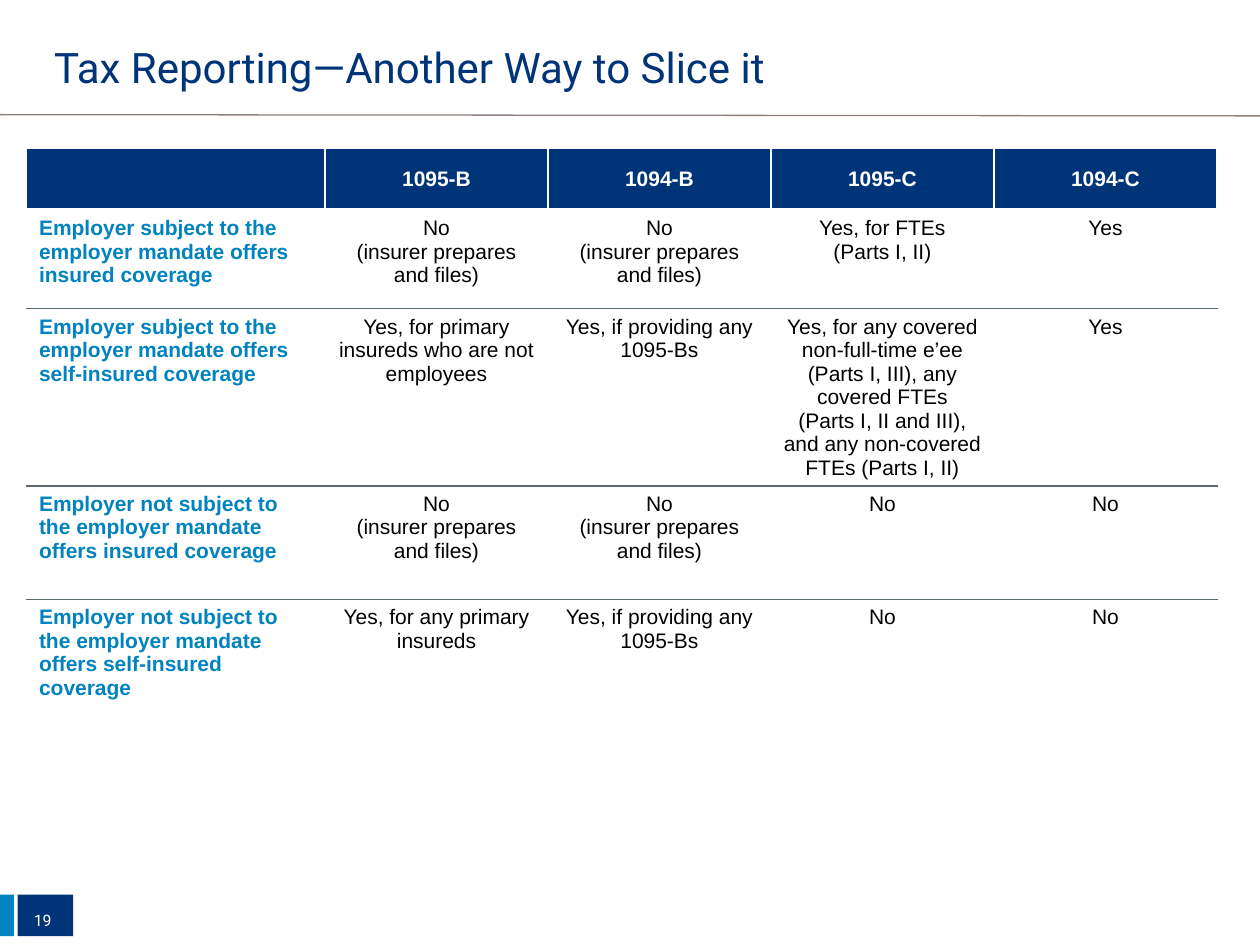
from lxml.etree import SubElement
from pptx import Presentation
from pptx.dml.color import RGBColor
from pptx.enum.shapes import MSO_CONNECTOR, MSO_SHAPE
from pptx.enum.text import MSO_ANCHOR, PP_ALIGN
from pptx.oxml.ns import qn
from pptx.util import Inches, Pt

NAVY, BLUE, GREY, WHITE, BLACK = "003478", "0083BE", "5E6A71", "FFFFFF", "000000"
WIDTHS = [2.37, 1.77, 1.77, 1.77, 1.77]
HEIGHTS = [0.49, 0.78, 1.3, 0.9, 1.09]
INSURER = "No\n(insurer prepares and files)"
FILES = "Yes, if providing any 1095-Bs"
ROWS = [
    ["", "1095-B", "1094-B", "1095-C", "1094-C"],
    ["Employer subject to the employer mandate offers insured coverage",
     INSURER, INSURER, "Yes, for FTEs\n(Parts I, II)", "Yes"],
    ["Employer subject to the employer mandate offers self-insured coverage",
     "Yes, for primary insureds who are not employees", FILES,
     "Yes, for any covered non-full-time e’ee (Parts I, III), any covered FTEs\n"
     "(Parts I, II and III), and any non-covered FTEs (Parts I, II)", "Yes"],
    ["Employer not subject to the employer mandate offers insured coverage",
     INSURER, INSURER, "No", "No"],
    ["Employer not subject to the employer mandate offers self-insured coverage",
     "Yes, for any primary insureds", FILES, "No", "No"],
]
RULES = [(WHITE, 1), (WHITE, 3), (GREY, 1), (GREY, 1), (GREY, 1), (WHITE, 1)]


def color(code):
    return RGBColor.from_string(code)


def write(frame, text, size=12, font="Arial", ink=BLACK, bold=False,
          align=PP_ALIGN.LEFT, anchor=MSO_ANCHOR.TOP):
    frame.text = text
    frame.word_wrap = True
    frame.vertical_anchor = anchor
    for para in frame.paragraphs:
        para.alignment = align
        for run in para.runs:
            run.font.size = Pt(size)
            run.font.name = font
            run.font.bold = bold
            run.font.color.rgb = color(ink)


def place(shape, left, top, width, height):
    shape.left, shape.top = Inches(left), Inches(top)
    shape.width, shape.height = Inches(width), Inches(height)


def add_bar(slide, left, top, width, height, fill):
    bar = slide.shapes.add_shape(MSO_SHAPE.RECTANGLE, Inches(left), Inches(top),
                                 Inches(width), Inches(height))
    bar.shadow.inherit = False
    bar.fill.solid()
    bar.fill.fore_color.rgb = color(fill)
    bar.line.fill.background()


def add_rule(slide, left, top, right, bottom, ink):
    rule = slide.shapes.add_connector(MSO_CONNECTOR.STRAIGHT, Inches(left), Inches(top),
                                      Inches(right), Inches(bottom))
    rule.line.color.rgb = color(ink)
    rule.line.width = Pt(0.75)
    SubElement(rule.element.spPr, qn("a:effectLst"))


def add_edge(cell, side, ink, width):
    edge = SubElement(cell._tc.get_or_add_tcPr(), qn(f"a:ln{side}"), w=str(Pt(width)))
    fill = SubElement(edge, qn("a:solidFill"))
    SubElement(fill, qn("a:srgbClr"), val=ink)


def style(cell, row, col, text):
    for side, rule in zip("LRTB", [(WHITE, 1), (WHITE, 1), RULES[row], RULES[row + 1]]):
        add_edge(cell, side, *rule)
    head, label = row == 0, col == 0
    cell.fill.solid()
    cell.fill.fore_color.rgb = color(NAVY if head else WHITE)
    write(cell.text_frame, text, bold=head or label,
          ink=WHITE if head else BLUE if label else BLACK,
          align=PP_ALIGN.LEFT if label else PP_ALIGN.CENTER)
    cell.vertical_anchor = MSO_ANCHOR.MIDDLE if head else MSO_ANCHOR.TOP


def add_grid(slide, left, top):
    grid = slide.shapes.add_table(len(ROWS), len(WIDTHS), Inches(left), Inches(top),
                                  Inches(sum(WIDTHS)), Inches(sum(HEIGHTS))).table
    grid.horz_banding = False
    for col, width in zip(grid.columns, WIDTHS):
        col.width = Inches(width)
    for row, height in zip(grid.rows, HEIGHTS):
        row.height = Inches(height)
    for row, texts in enumerate(ROWS):
        for col, text in enumerate(texts):
            style(grid.cell(row, col), row, col, text)


def main():
    deck = Presentation()
    deck.slide_width, deck.slide_height = Inches(10), Inches(7.5)
    slide = deck.slides.add_slide(deck.slide_layouts[5])
    add_bar(slide, 0.14, 7.1, 0.44, 0.33, NAVY)
    add_bar(slide, 0, 7.1, 0.11, 0.33, BLUE)
    add_rule(slide, 0, 0.91, 10, 0.92, "8D817B")
    title = slide.shapes.title
    place(title, 0.33, 0.22, 9.17, 0.62)
    write(title.text_frame, "Tax Reporting—Another Way to Slice it", size=24,
          font="Roboto", ink=NAVY, anchor=MSO_ANCHOR.MIDDLE)
    add_grid(slide, 0.21, 1.18)
    page = slide.shapes.add_textbox(0, 0, 0, 0)
    place(page, 0.17, 7.1, 0.42, 0.4)
    write(page.text_frame, "19", size=9, font="Roboto", ink=WHITE, anchor=MSO_ANCHOR.MIDDLE)
    deck.save("out.pptx")


if __name__ == "__main__":
    main()
